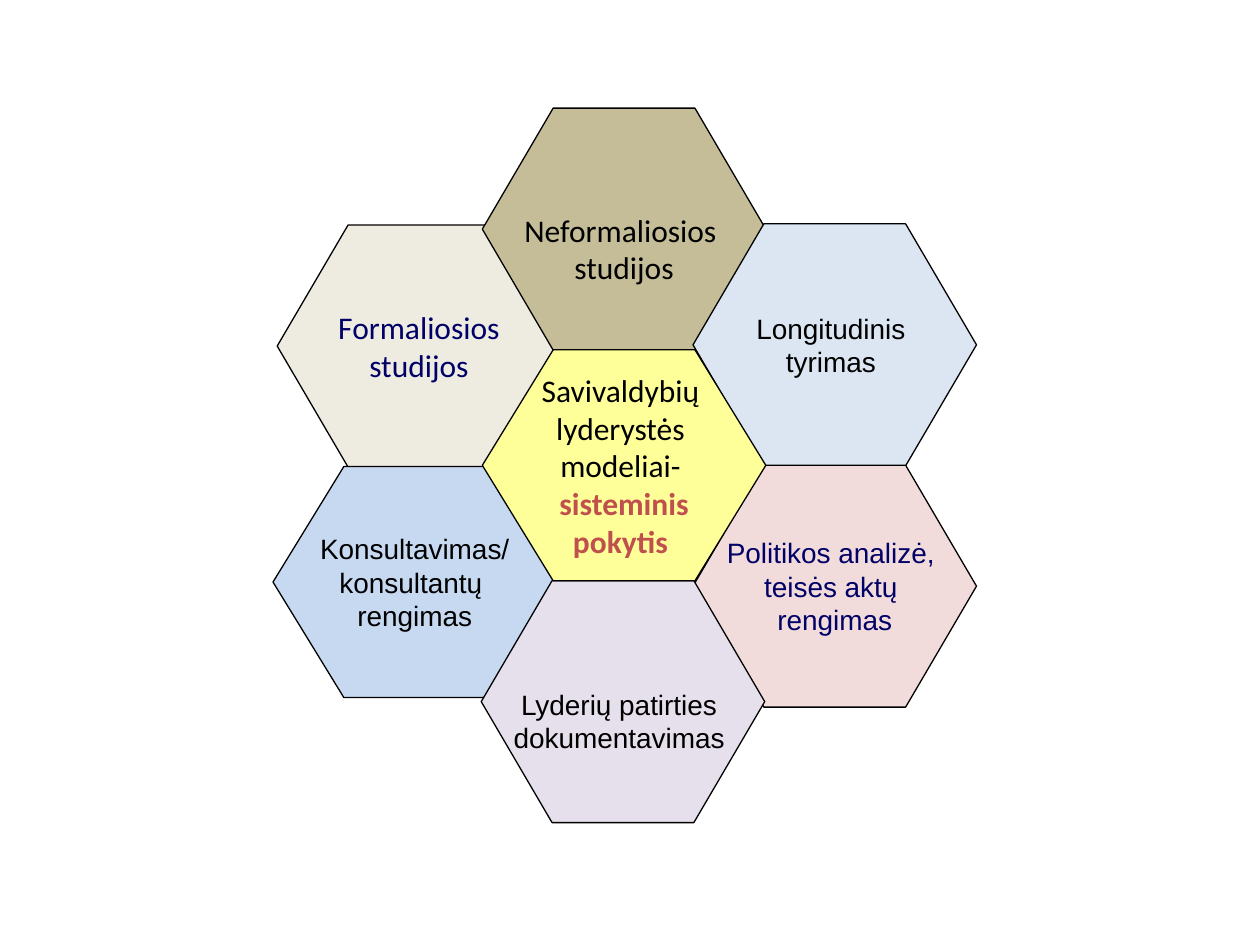
"""Build a slide with a honeycomb of seven labelled hexagons."""
from pptx import Presentation
from pptx.dml.color import RGBColor
from pptx.enum.shapes import MSO_SHAPE
from pptx.enum.text import MSO_ANCHOR, PP_ALIGN
from pptx.util import Pt

BLACK, NAVY, RED = "000000", "000066", "C0504D"
WIDE, SLANT = 162, 40.5
TALL, LOW = 138.3, 132
LEFT, MID, RIGHT = 158.4, 275.6, 396
BODY = {"name": "Arial", "size": Pt(16)}
LARGE = {"name": "Calibri", "size": Pt(18)}


def tint(code):
    return RGBColor.from_string(code)


class Comb:
    def __init__(self, deck):
        self.slide = deck.slides.add_slide(deck.slide_layouts[6])
        self.edge = {"width": Pt(0.75)}
        self.frame = {"word_wrap": False, "vertical_anchor": MSO_ANCHOR.MIDDLE}

    def format(self, item, values):
        for key, value in values.items():
            setattr(item, key, value)

    def cell(self, left, top, high, fill, style, parts, drop=0):
        box = self.slide.shapes.add_shape(
            MSO_SHAPE.HEXAGON, Pt(left), Pt(top), Pt(WIDE), Pt(high))
        box.adjustments[0] = SLANT / high
        box.shadow.inherit = False
        box.fill.solid()
        box.fill.fore_color.rgb = tint(fill)
        box.line.color.rgb = tint(BLACK)
        self.format(box.line, self.edge)
        frame = box.text_frame
        self.format(frame, self.frame)
        frame.margin_top = Pt(3.6 + drop)
        for index, (text, color, bold) in enumerate(parts):
            para = frame.add_paragraph() if index else frame.paragraphs[0]
            self.text(para, text, color, {**style, "bold": bold})

    def text(self, para, text, color, style):
        para.text = text
        para.alignment = PP_ALIGN.CENTER
        for run in para.runs:
            self.format(run.font, style)
            run.font.color.rgb = tint(color)


def main():
    deck = Presentation()
    deck.slide_width, deck.slide_height = Pt(720), Pt(540)
    comb = Comb(deck)
    cells = [
        (LEFT, 128.6, TALL, "EEECE1", LARGE,
         [("Formaliosios\nstudijos", NAVY, False)]),
        (LEFT - 2.4, 266.6, LOW, "C6D9F1", BODY,
         [("Konsultavimas/\nkonsultantų ", BLACK, False),
          ("rengimas", BLACK, False)]),
        (MID, 61.8, TALL, "C4BD97", LARGE,
         [("Neformaliosios \nstudijos", BLACK, False)], 22),
        (RIGHT, 127.9, TALL, "DCE6F2", BODY,
         [("Longitudinis \ntyrimas ", BLACK, False)]),
        (RIGHT, 265.8, TALL, "F2DCDB", BODY,
         [("Politikos analizė, \nteisės aktų ", NAVY, False),
          ("rengimas", NAVY, False)]),
        (MID - 0.6, 331.8, TALL, "E6E0EC", BODY,
         [("Lyderių patirties \ndokumentavimas ", BLACK, False)], 22),
        (MID, 199.9, LOW, "FFFF99", LARGE,
         [("Savivaldybių \nlyderystės \nmodeliai- ", BLACK, False),
          ("sisteminis\npokytis ", RED, True)]),
    ]
    for cell in cells:
        comb.cell(*cell)
    deck.save("out.pptx")


if __name__ == "__main__":
    main()
